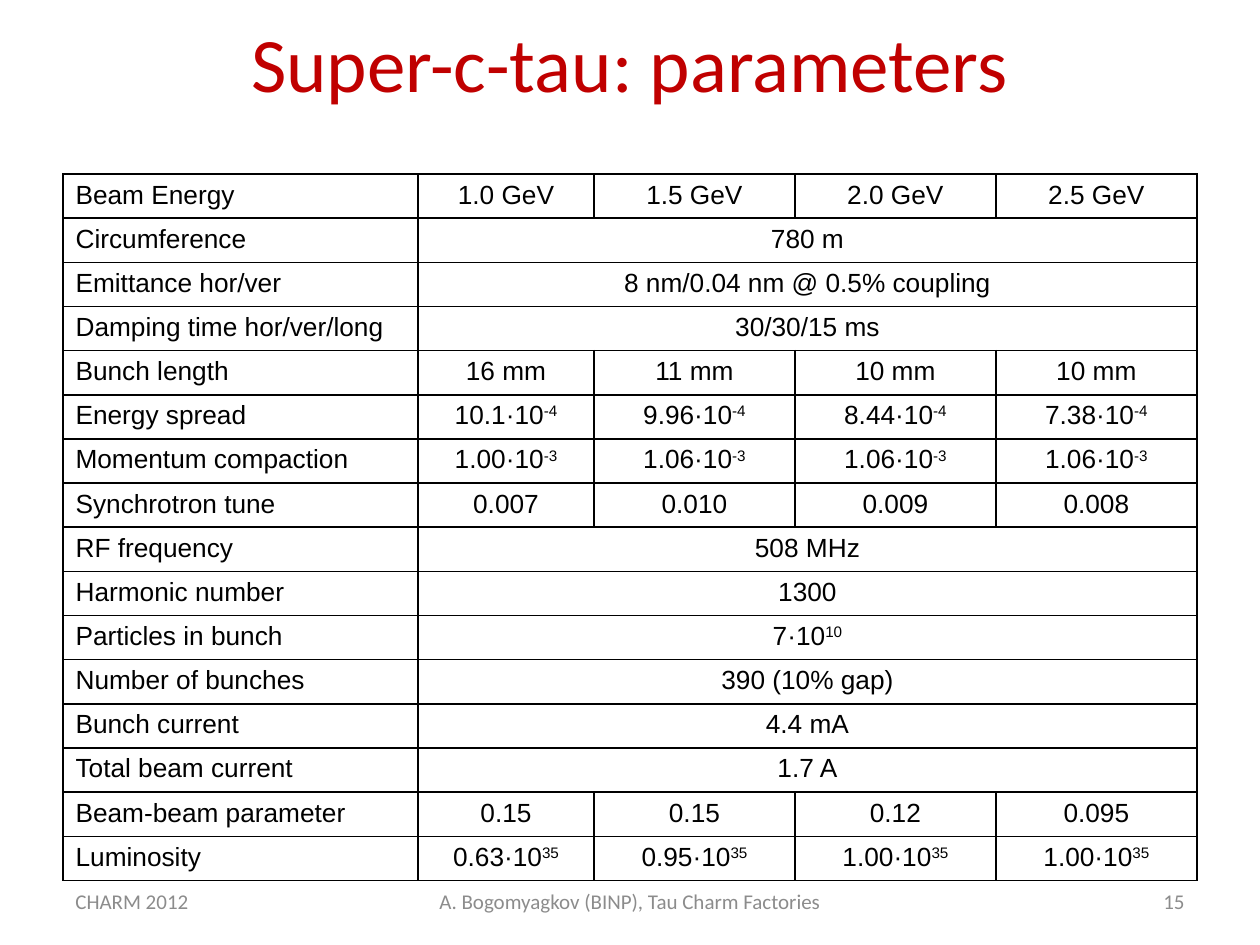
from lxml import etree
from pptx import Presentation
from pptx import util as u
from pptx.dml.color import RGBColor
from pptx.enum import text
from pptx.oxml import ns

RED = RGBColor(0xC0, 0x00, 0x00)
GREY = RGBColor(0x8C, 0x8C, 0x8C)
BLACK = RGBColor(0x00, 0x00, 0x00)
WHITE = RGBColor(0xFF, 0xFF, 0xFF)

LEFT, CENTER, RIGHT = text.PP_ALIGN.LEFT, text.PP_ALIGN.CENTER, text.PP_ALIGN.RIGHT

TITLE_FONT = {"name": "Calibri", "size": u.Pt(44), "color": RED}
FOOTER_FONT = {"name": "Calibri", "size": u.Pt(12), "color": GREY}
CELL_FONT = {"name": "Arial", "size": u.Pt(15), "color": BLACK}

LABELS = [
    ("Super-c-tau: parameters", (63, 0, 1134, 124), CENTER, TITLE_FONT),
    ("CHARM 2012", (63, 876, 294, 50), LEFT, FOOTER_FONT),
    ("A. Bogomyagkov (BINP), Tau Charm Factories", (397, 876, 466, 50), CENTER, FOOTER_FONT),
    ("15", (903, 876, 294, 50), RIGHT, FOOTER_FONT),
]

PARAMETERS = [
    ("Beam Energy", "1.0 GeV", "1.5 GeV", "2.0 GeV", "2.5 GeV"),
    ("Circumference", "780 m"),
    ("Emittance hor/ver", "8 nm/0.04 nm @ 0.5% coupling"),
    ("Damping time hor/ver/long", "30/30/15 ms"),
    ("Bunch length", "16 mm", "11 mm", "10 mm", "10 mm"),
    ("Energy spread", "10.1·10^-4", "9.96·10^-4", "8.44·10^-4", "7.38·10^-4"),
    ("Momentum compaction", "1.00·10^-3", "1.06·10^-3", "1.06·10^-3", "1.06·10^-3"),
    ("Synchrotron tune", "0.007", "0.010", "0.009", "0.008"),
    ("RF frequency", "508 MHz"),
    ("Harmonic number", "1300"),
    ("Particles in bunch", "7·10^10"),
    ("Number of bunches", "390 (10% gap)"),
    ("Bunch current", "4.4 mA"),
    ("Total beam current", "1.7 A"),
    ("Beam-beam parameter", "0.15", "0.15", "0.12", "0.095"),
    ("Luminosity", "0.63·10^35", "0.95·10^35", "1.00·10^35", "1.00·10^35"),
]
TABLE_LEFT, TABLE_TOP, ROW_HEIGHT = 63, 174, 44
COLUMN_WIDTHS = [355, 176, 201, 201, 201]


def px(length):
    return u.Emu(round(length * 914400 / 126))


def write(frame, content, align, font):
    para = frame.paragraphs[0]
    para.alignment = align
    for index, part in enumerate(content.split("^")):
        span = para.add_run()
        span.text = part
        for key, value in font.items():
            if key == "color":
                span.font.color.rgb = value
            else:
                setattr(span.font, key, value)
        if index:
            span._r.get_or_add_rPr().set("baseline", "30000")


def add_label(page, content, place, align, font):
    frame = page.shapes.add_textbox(*map(px, place)).text_frame
    frame.word_wrap = True
    frame.vertical_anchor = text.MSO_ANCHOR.MIDDLE
    write(frame, content, align, font)


def style_cell(cell):
    cell.fill.solid()
    cell.fill.fore_color.rgb = WHITE
    properties = cell._tc.get_or_add_tcPr()
    for index, side in enumerate(("lnL", "lnR", "lnT", "lnB")):
        line = etree.Element(ns.qn(f"a:{side}"), w=str(u.Pt(1)))
        fill = etree.SubElement(line, ns.qn("a:solidFill"))
        etree.SubElement(fill, ns.qn("a:srgbClr"), val=str(BLACK))
        properties.insert(index, line)


def add_parameters(page):
    rows, columns = len(PARAMETERS), len(COLUMN_WIDTHS)
    place = (TABLE_LEFT, TABLE_TOP, sum(COLUMN_WIDTHS), rows * ROW_HEIGHT)
    table = page.shapes.add_table(rows, columns, *map(px, place)).table
    table.first_row = table.horz_banding = False
    for column, width in zip(table.columns, COLUMN_WIDTHS):
        column.width = px(width)
    for row_index, values in enumerate(PARAMETERS):
        table.rows[row_index].height = px(ROW_HEIGHT)
        for column_index in range(columns):
            style_cell(table.cell(row_index, column_index))
        if len(values) < columns:
            table.cell(row_index, 1).merge(table.cell(row_index, columns - 1))
        for column_index, value in enumerate(values):
            align = CENTER if column_index else LEFT
            write(table.cell(row_index, column_index).text_frame, value, align, CELL_FONT)


def main():
    deck = Presentation()
    deck.slide_width, deck.slide_height = px(1260), px(945)
    page = deck.slides.add_slide(deck.slide_layouts[6])
    for label in LABELS:
        add_label(page, *label)
    add_parameters(page)
    deck.save("out.pptx")


if __name__ == "__main__":
    main()
